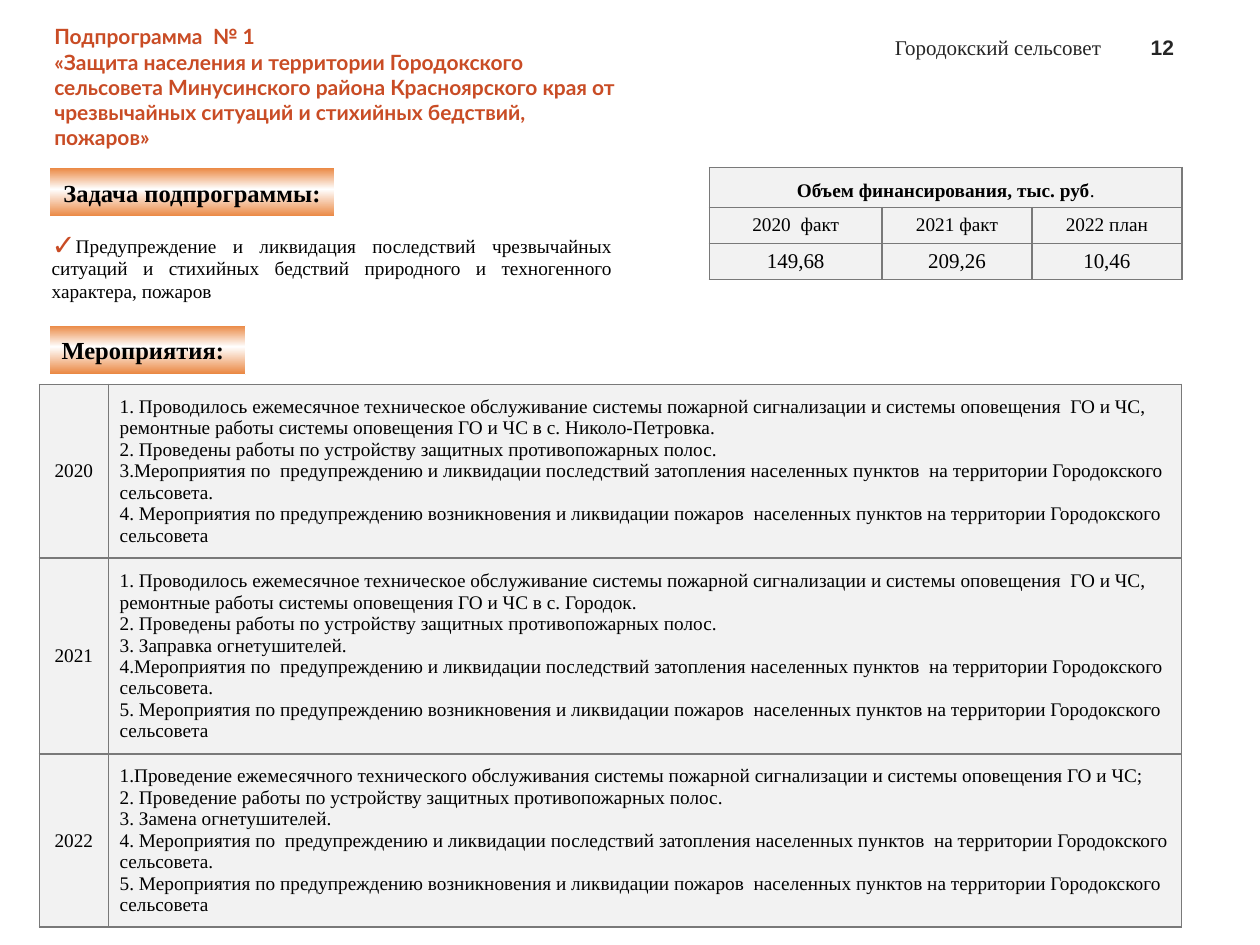
"""Build the subprogramme slide with its tasks, funding and yearly measures."""
from copy import deepcopy
from dataclasses import dataclass, field

from pptx import Presentation
from pptx.dml.color import RGBColor as Rgb
from pptx.enum.shapes import MSO_SHAPE as Form
from pptx.enum.text import MSO_ANCHOR as Anchor, MSO_AUTO_SIZE as Auto, PP_ALIGN as Align
from pptx.oxml import parse_xml
from pptx.oxml.ns import nsdecls, qn
from pptx.util import Pt

HUES = {"rust": "C94C25", "glow": "EA8640", "white": "FFFFFF", "ink": "000000",
        "dark": "262626", "pale": "F2F2F2", "edge": "797979"}
SERIF = "Times New Roman"
PLAIN = {"name": SERIF, "size": Pt(11), "bold": False}
STRONG = PLAIN | {"bold": True}
LARGE = PLAIN | {"size": Pt(12)}
HEAD = {"name": SERIF, "size": Pt(14), "bold": True}
Box = tuple[float, float, float, float]


@dataclass
class Cell:
    """One table cell: its lines and how they look."""
    lines: list[str]
    look: dict = field(default_factory=lambda: PLAIN)
    align: Align = Align.CENTER
    anchor: Anchor = Anchor.MIDDLE
    pad: Box = (7.2, 3.6, 7.2, 3.6)
    tail: str = ""


@dataclass
class Note:
    """A small text at the top of the slide."""
    text: str
    box: Box
    look: dict
    align: Align


@dataclass
class Badge:
    """A section heading on a gradient band."""
    text: str
    box: Box
    align: Align


def shade(name: str) -> Rgb:
    """Return a named colour."""
    return Rgb.from_string(HUES[name])


def style(font, look: dict, hue: str = "ink") -> None:
    """Apply format values and a colour to a font."""
    for key, val in look.items():
        setattr(font, key, val)
    font.color.rgb = shade(hue)


def place(shape, box: Box) -> None:
    """Move and size a shape."""
    for key, val in zip(("left", "top", "width", "height"), box):
        setattr(shape, key, Pt(val))


def pad_out(part, pad: Box) -> None:
    """Set the inner margins of a cell or text frame."""
    for side, val in zip(("left", "top", "right", "bottom"), pad):
        setattr(part, f"margin_{side}", Pt(val))


def frame(shape, anchor: Anchor):
    """Prepare a wrapping text frame and return it."""
    text = shape.text_frame
    text.word_wrap, text.auto_size, text.vertical_anchor = True, Auto.NONE, anchor
    return text


def put(par, text: str, look: dict, align: Align, hue: str = "ink") -> None:
    """Fill a paragraph with formatted text."""
    par.text, par.alignment, par.space_before = text, align, Pt(0)
    for run in par.runs:
        style(run.font, look, hue)


def add_note(slide, note: Note) -> None:
    """Draw a header text."""
    shape = slide.shapes.add_textbox(*map(Pt, note.box))
    put(frame(shape, Anchor.BOTTOM).paragraphs[0], note.text, note.look, note.align, "dark")


def add_badge(slide, badge: Badge) -> None:
    """Draw a section heading."""
    shape = slide.shapes.add_shape(Form.PENTAGON, *map(Pt, badge.box))
    shape.adjustments[0] = 0
    shape.shadow.inherit = False
    fill = shape.fill
    fill.gradient()
    fill.gradient_angle = 270
    stops = shape._element.spPr.find(".//" + qn("a:gsLst"))
    stops.append(deepcopy(stops[0]))
    for stop, (spot, hue) in zip(fill.gradient_stops,
                                 ((0, "glow"), (0.44, "white"), (1, "glow"))):
        stop.position, stop.color.rgb = spot, shade(hue)
    shape.line.color.rgb = shade("white")
    shape.line.width = Pt(0.75)
    put(frame(shape, Anchor.MIDDLE).paragraphs[0], badge.text, HEAD, badge.align)


def rule(cell) -> None:
    """Draw all four borders of a cell."""
    for spot, side in enumerate("LRTB"):
        cell._tc.get_or_add_tcPr().insert(spot, parse_xml(
            f'<a:ln{side} {nsdecls("a")} w="{Pt(1)}"><a:solidFill>'
            f'<a:srgbClr val="{HUES["edge"]}"/></a:solidFill></a:ln{side}>'))


def fill_cell(cell, data: Cell) -> None:
    """Write the lines of one cell."""
    cell.vertical_anchor = data.anchor
    pad_out(cell, data.pad)
    text = cell.text_frame
    for spot, line in enumerate(data.lines):
        par = text.add_paragraph() if spot else text.paragraphs[0]
        put(par, line, data.look, data.align)
        if len(data.lines) > 1:
            par.line_spacing = Pt(12.25)
    if data.tail:
        run = text.paragraphs[-1].add_run()
        run.text = data.tail
        style(run.font, PLAIN)


def add_grid(slide, left: float, top: float, cols: list[float],
             rows: list[float], cells: list[list[Cell]]) -> None:
    """Draw a table; a row with a single cell spans all columns."""
    grid = slide.shapes.add_table(len(rows), len(cols), Pt(left), Pt(top),
                                  Pt(sum(cols)), Pt(sum(rows))).table
    grid.first_row = grid.horz_banding = False
    for col, wide in zip(grid.columns, cols):
        col.width = Pt(wide)
    for spot, (row, high) in enumerate(zip(grid.rows, rows)):
        row.height = Pt(high)
        for cell in row.cells:
            cell.fill.solid()
            cell.fill.fore_color.rgb = shade("pale")
            rule(cell)
        if len(cells[spot]) == 1:
            grid.cell(spot, 0).merge(grid.cell(spot, len(cols) - 1))
        for cell, data in zip(row.cells, cells[spot]):
            fill_cell(cell, data)


TITLE = ("Подпрограмма  № 1 \v«Защита населения и территории Городокского сельсовета "
         "Минусинского района Красноярского края от чрезвычайных ситуаций и стихийных "
         "бедствий, пожаров»")
TASK = ("Предупреждение и ликвидация последствий чрезвычайных ситуаций и стихийных "
        "бедствий природного и техногенного характера, пожаров")
NOTES = [Note("Городокский сельсовет", (462.2, 13.7, 174.2, 23.8), LARGE, Align.RIGHT),
         Note("12", (644.4, 13.7, 39.6, 23.8),
              {"name": "Arial", "size": Pt(12), "bold": True}, Align.CENTER)]
BADGES = [Badge("Задача подпрограммы:", (28.1, 95.8, 163.4, 28.1), Align.CENTER),
          Badge("Мероприятия:", (28.1, 185.8, 112.3, 28.1), Align.LEFT)]
CHECK = "1. Проводилось ежемесячное техническое обслуживание системы пожарной сигнализации и системы оповещения  ГО и ЧС,"
REPAIR = "ремонтные работы системы оповещения ГО и ЧС в с. "
STRIPS = "2. Проведены работы по устройству защитных противопожарных полос."
FLOOD = "Мероприятия по  предупреждению и ликвидации последствий затопления населенных пунктов  на территории Городокского"
FIRE = "Мероприятия по предупреждению возникновения и ликвидации пожаров  населенных пунктов на территории Городокского"
YEARS = {
    "2020": [CHECK, REPAIR + "Николо-Петровка.", STRIPS,
             "3." + FLOOD, "сельсовета.", "4. " + FIRE, "сельсовета"],
    "2021": [CHECK, REPAIR + "Городок.", STRIPS, "3. Заправка огнетушителей.",
             "4." + FLOOD, "сельсовета.", "5. " + FIRE, "сельсовета"],
    "2022": ["1.Проведение ежемесячного технического обслуживания системы пожарной сигнализации и системы оповещения ГО и ЧС;",
             "2. Проведение работы по устройству защитных противопожарных полос.",
             "3. Замена огнетушителей.",
             "4. " + FLOOD, "сельсовета.", "5. " + FIRE, "сельсовета"]}
FUNDS = {"2020  факт": "149,68", "2021 факт": "209,26", "2022 план": "10,46"}


def main() -> None:
    """Build and save the slide."""
    deck = Presentation()
    deck.slide_width, deck.slide_height = Pt(720), Pt(540)
    slide = deck.slides.add_slide(deck.slide_layouts[1])
    title, body = slide.placeholders

    place(title, (16.6, 25.9, 337.7, 47.5))
    text = frame(title, Anchor.MIDDLE)
    pad_out(text, (14.4, 3.6, 0, 3.6))
    put(text.paragraphs[0], TITLE, {"name": "Lato", "size": Pt(12), "bold": True},
        Align.LEFT, "rust")

    place(body, (22.3, 129.6, 334.8, 47.5))
    par = frame(body, Anchor.MIDDLE).paragraphs[0]
    props = par._p.get_or_add_pPr()
    props.set("marL", "0")
    props.set("indent", "0")
    for tag in (f'buClr {nsdecls("a")}><a:srgbClr val="{HUES["rust"]}"/></a:buClr',
                f'buSzPct {nsdecls("a")} val="150000"/',
                f'buChar {nsdecls("a")} char="✓"/'):
        props.append(parse_xml(f"<a:{tag}>"))
    put(par, TASK, PLAIN, Align.JUSTIFY)
    par.line_spacing = Pt(13.1)

    for note in NOTES:
        add_note(slide, note)
    for badge in BADGES:
        add_badge(slide, badge)
    add_grid(slide, 405.4, 95.8, [98.6, 85.7, 85.7], [22.8, 20.6, 20.6], [
        [Cell(["Объем финансирования, тыс. руб"], STRONG, anchor=Anchor.BOTTOM, tail=".")],
        [Cell([year], anchor=Anchor.TOP) for year in FUNDS],
        [Cell([sum_], LARGE, pad=(6.5, 2.9, 6.5, 2.9)) for sum_ in FUNDS.values()]])
    add_grid(slide, 22.5, 219.6, [39.4, 613.4], [99.4, 112, 98.9], [
        [Cell([year]), Cell(lines, align=Align.JUSTIFY, pad=(6.5, 2.9, 4, 2.9))]
        for year, lines in YEARS.items()])
    deck.save("out.pptx")


if __name__ == "__main__":
    main()
